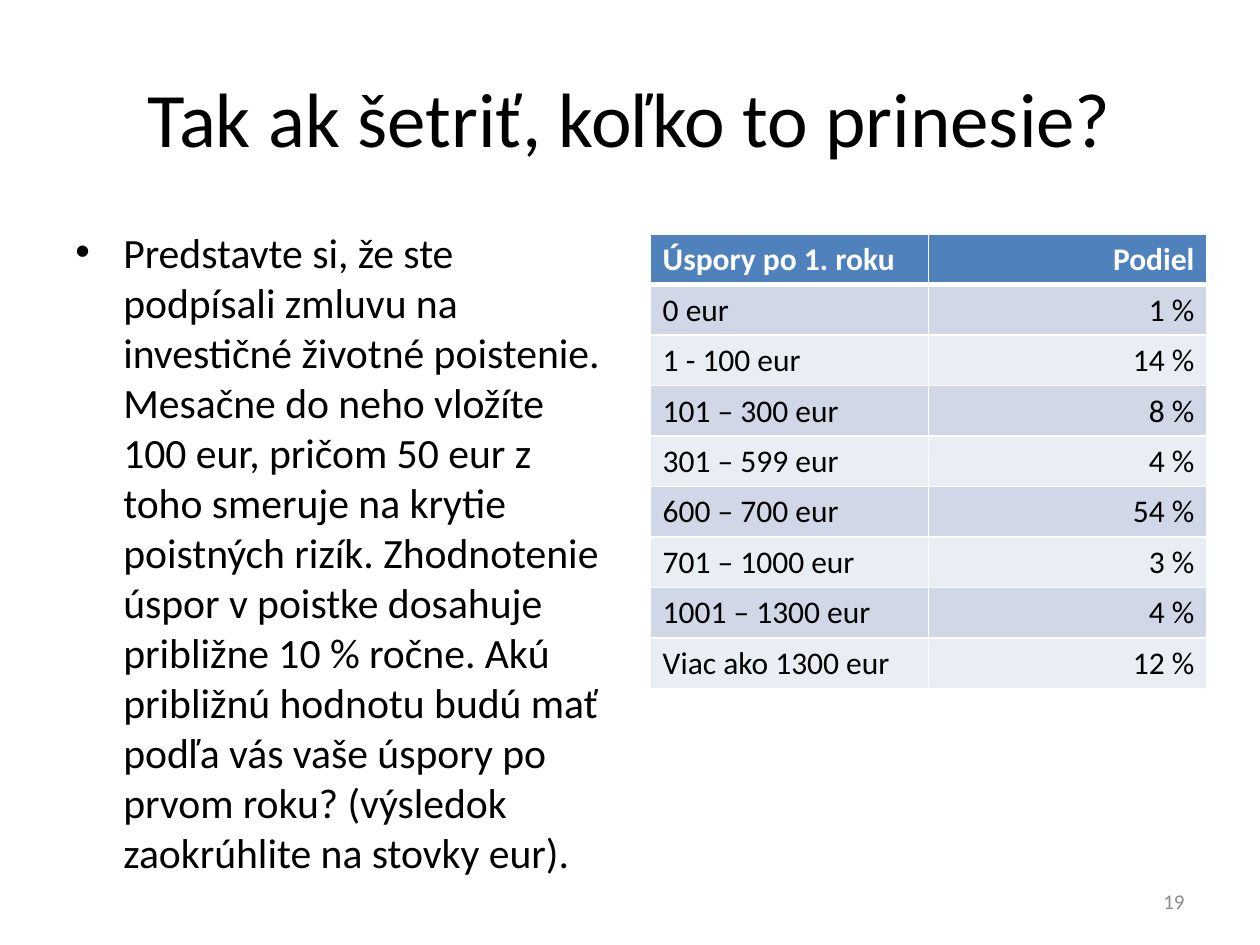
from pptx import Presentation
from pptx.dml.color import RGBColor
from pptx.enum.text import MSO_ANCHOR as Anchor, PP_ALIGN as Align
from pptx.oxml import parse_xml
from pptx.oxml.ns import nsdecls
from pptx.util import Inches, Pt

BLACK = RGBColor(0x00, 0x00, 0x00)
WHITE = RGBColor(0xFF, 0xFF, 0xFF)
GREY = RGBColor(0x8C, 0x8C, 0x8C)
BLUE = RGBColor(0x4F, 0x81, 0xBD)
BANDS = RGBColor(0xD0, 0xD8, 0xE8), RGBColor(0xE9, 0xED, 0xF4)
FONT = "Calibri"
INDENT = Inches(0.38)

TITLE = "Tak ak šetriť, koľko to prinesie?"
BODY = (
    "Predstavte si, že ste podpísali zmluvu na investičné životné poistenie. "
    "Mesačne do neho vložíte 100 eur, pričom 50 eur z toho smeruje na krytie "
    "poistných rizík. Zhodnotenie úspor v poistke dosahuje približne 10 % ročne. "
    "Akú približnú hodnotu budú mať podľa vás vaše úspory po prvom roku? "
    "(výsledok zaokrúhlite na stovky eur)."
)
ROWS = [
    ("Úspory po 1. roku", "Podiel"),
    ("0 eur", "1 %"),
    ("1 - 100 eur", "14 %"),
    ("101 – 300 eur", "8 %"),
    ("301 – 599 eur", "4 %"),
    ("600 – 700 eur", "54 %"),
    ("701 – 1000 eur", "3 %"),
    ("1001 – 1300 eur", "4 %"),
    ("Viac ako 1300 eur", "12 %"),
]


def write(frame, text, size, color=BLACK, bold=False, align=Align.LEFT,
          bullet=False, pitch=None):
    """Fill the first paragraph of a text frame."""
    para = frame.paragraphs[0]
    if bullet:
        props = para._p.get_or_add_pPr()
        props.set("marL", str(INDENT))
        props.set("indent", str(-INDENT))
        props.append(parse_xml(f'<a:buFont {nsdecls("a")} typeface="Arial"/>'))
        props.append(parse_xml(f'<a:buChar {nsdecls("a")} char="•"/>'))
    para.alignment = align
    if pitch:
        para.line_spacing = Pt(pitch)
    run = para.add_run()
    run.text = text
    font = run.font
    font.name, font.size, font.bold = FONT, Pt(size), bold
    font.color.rgb = color


def add_text(slide, box, text, size, anchor=Anchor.MIDDLE, **style):
    frame = slide.shapes.add_textbox(*box).text_frame
    frame.word_wrap = True
    frame.vertical_anchor = anchor
    write(frame, text, size, **style)


def edge(cell, foot):
    """White cell borders, with a heavier one at the foot if asked."""
    props = cell._tc.get_or_add_tcPr()
    widths = {"lnL": 1, "lnR": 1, "lnT": 1, "lnB": foot}
    for spot, (tag, width) in enumerate(widths.items()):
        props.insert(spot, parse_xml(
            f'<a:{tag} {nsdecls("a")} w="{Pt(width)}"><a:solidFill>'
            f'<a:srgbClr val="{WHITE}"/></a:solidFill></a:{tag}>'))


def add_grid(slide, box, rows):
    """Two-column table: header row, then banded rows."""
    table = slide.shapes.add_table(len(rows), len(rows[0]), *box).table
    for i, row in enumerate(rows):
        head = i == 0
        for j, text in enumerate(row):
            cell = table.cell(i, j)
            cell.fill.solid()
            cell.fill.fore_color.rgb = BLUE if head else BANDS[(i - 1) % 2]
            edge(cell, foot=3 if head or i == 0 else 1)
            write(cell.text_frame, text, 18, bold=head,
                  color=WHITE if head else BLACK,
                  align=Align.RIGHT if j else Align.LEFT)


def build(slide, wide, high):
    def area(left, top, width, height):
        return (int(left * wide), int(top * high),
                int(width * wide), int(height * high))

    # Title
    add_text(slide, area(0.05, 0.04, 0.9, 0.167), TITLE, 44, align=Align.CENTER)
    # Question on the left
    add_text(slide, area(0.05, 0.233, 0.442, 0.66), BODY, 23.8,
             anchor=Anchor.TOP, bullet=True, pitch=28.6)
    # Answers on the right
    add_grid(slide, area(0.516, 0.248, 0.442, 0.48), ROWS)
    # Page number
    add_text(slide, area(0.717, 0.927, 0.233, 0.053), "19", 12,
             color=GREY, align=Align.RIGHT)


def main():
    deck = Presentation()
    deck.slide_width, deck.slide_height = Inches(10), Inches(7.5)
    slide = deck.slides.add_slide(deck.slide_layouts[6])
    build(slide, deck.slide_width, deck.slide_height)
    deck.save("out.pptx")


if __name__ == "__main__":
    main()
